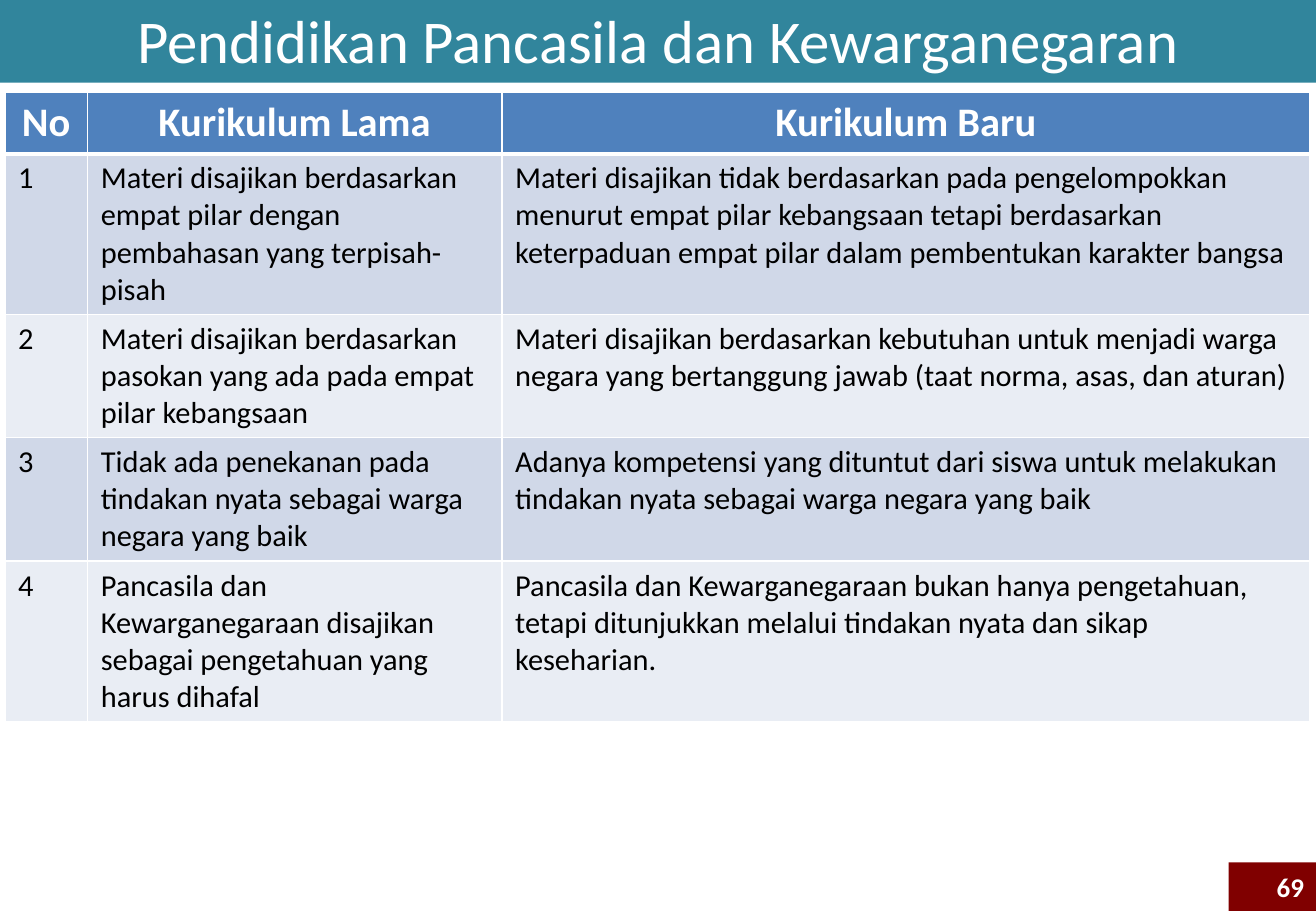
from lxml import etree
from pptx import Presentation
from pptx.dml.color import RGBColor
from pptx.enum.shapes import MSO_SHAPE
from pptx.enum.text import MSO_ANCHOR, MSO_AUTO_SIZE, PP_ALIGN
from pptx.oxml.ns import qn
from pptx.util import Inches, Pt

RECTANGLE = MSO_SHAPE.RECTANGLE
MIDDLE = MSO_ANCHOR.MIDDLE
NO_AUTOFIT = MSO_AUTO_SIZE.NONE
LEFT, CENTER, RIGHT = PP_ALIGN.LEFT, PP_ALIGN.CENTER, PP_ALIGN.RIGHT

TEAL = RGBColor(0x31, 0x85, 0x9C)
MAROON = RGBColor(0x80, 0x00, 0x00)
HEADER_BLUE = RGBColor(0x4F, 0x81, 0xBD)
BANDS = [RGBColor(0xE9, 0xED, 0xF4), RGBColor(0xD0, 0xD8, 0xE8)]
WHITE = RGBColor(0xFF, 0xFF, 0xFF)
BLACK = RGBColor(0x00, 0x00, 0x00)

WIDTH, HEIGHT = 10.83, 7.5
COLUMNS = [0.68, 3.41, 6.65]
LINE_HEIGHT, CELL_PADDING = 0.305, 0.1
HEADER_HEIGHT = 0.5

ROWS = [
    ("No", "Kurikulum Lama", "Kurikulum Baru"),
    ("1",
     "Materi disajikan berdasarkan empat pilar dengan pembahasan yang terpisah-pisah",
     "Materi disajikan tidak berdasarkan pada pengelompokkan menurut empat pilar "
     "kebangsaan tetapi berdasarkan keterpaduan empat pilar dalam pembentukan "
     "karakter bangsa"),
    ("2",
     "Materi disajikan berdasarkan pasokan yang ada pada empat pilar kebangsaan",
     "Materi disajikan berdasarkan kebutuhan untuk menjadi warga negara yang "
     "bertanggung jawab (taat norma, asas, dan aturan)"),
    ("3",
     "Tidak ada penekanan pada tindakan nyata sebagai warga negara yang baik",
     "Adanya kompetensi yang dituntut dari siswa untuk melakukan tindakan nyata "
     "sebagai warga negara yang baik"),
    ("4",
     "Pancasila dan Kewarganegaraan disajikan sebagai pengetahuan yang harus dihafal",
     "Pancasila dan Kewarganegaraan bukan hanya pengetahuan, tetapi ditunjukkan "
     "melalui tindakan nyata dan sikap keseharian."),
]
TEXT_LINES = [4, 3, 3, 4]


def write(frame, text, size, color, align, bold=False):
    para = frame.paragraphs[0]
    para.alignment = align
    span = para.add_run()
    span.text = text
    span.font.name = "Calibri"
    span.font.size = Pt(size)
    span.font.bold = bold
    span.font.color.rgb = color


def set_borders(cell, widths):
    properties = cell._tc.get_or_add_tcPr()
    for place, (side, width) in enumerate(widths.items()):
        line = etree.Element(qn("a:ln" + side), w=str(Pt(width)))
        fill = etree.SubElement(line, qn("a:solidFill"))
        etree.SubElement(fill, qn("a:srgbClr"), val=str(WHITE))
        properties.insert(place, line)


deck = Presentation()
deck.slide_width, deck.slide_height = Inches(WIDTH), Inches(HEIGHT)
page = deck.slides.add_slide(deck.slide_layouts[5])

# Title band
title = page.shapes.title
title.left, title.top = Inches(0), Inches(-0.03)
title.width, title.height = Inches(WIDTH), Inches(0.71)
title.fill.solid()
title.fill.fore_color.rgb = TEAL
title.text_frame.auto_size = NO_AUTOFIT
title.text_frame.vertical_anchor = MIDDLE
write(title.text_frame, "Pendidikan Pancasila dan Kewarganegaran", 36, WHITE, CENTER)

# Comparison table
heights = [HEADER_HEIGHT] + [n * LINE_HEIGHT + CELL_PADDING for n in TEXT_LINES]
table = page.shapes.add_table(
    len(ROWS), len(COLUMNS), Inches(0.04), Inches(0.76),
    Inches(sum(COLUMNS)), Inches(sum(heights))).table
for column, width in zip(table.columns, COLUMNS):
    column.width = Inches(width)
for r, texts in enumerate(ROWS):
    table.rows[r].height = Inches(heights[r])
    header = r == 0
    for c, text in enumerate(texts):
        cell = table.cell(r, c)
        cell.margin_left = cell.margin_right = Inches(0.11)
        cell.fill.solid()
        cell.fill.fore_color.rgb = HEADER_BLUE if header else BANDS[r % 2]
        set_borders(cell, {"L": 1, "R": 1, "T": 3 if r == 1 else 1,
                           "B": 3 if header else 1})
        write(cell.text_frame, text, 24 if header else 18,
              WHITE if header else BLACK, CENTER if header else LEFT, header)

# Page number
box_width, box_height = 0.72, 0.4
box = page.shapes.add_shape(
    RECTANGLE, Inches(WIDTH - box_width), Inches(HEIGHT - box_height),
    Inches(box_width), Inches(box_height))
box.shadow.inherit = False
box.fill.solid()
box.fill.fore_color.rgb = MAROON
box.line.fill.background()
box.text_frame.vertical_anchor = MIDDLE
write(box.text_frame, "69", 16, WHITE, RIGHT, True)

deck.save("out.pptx")
